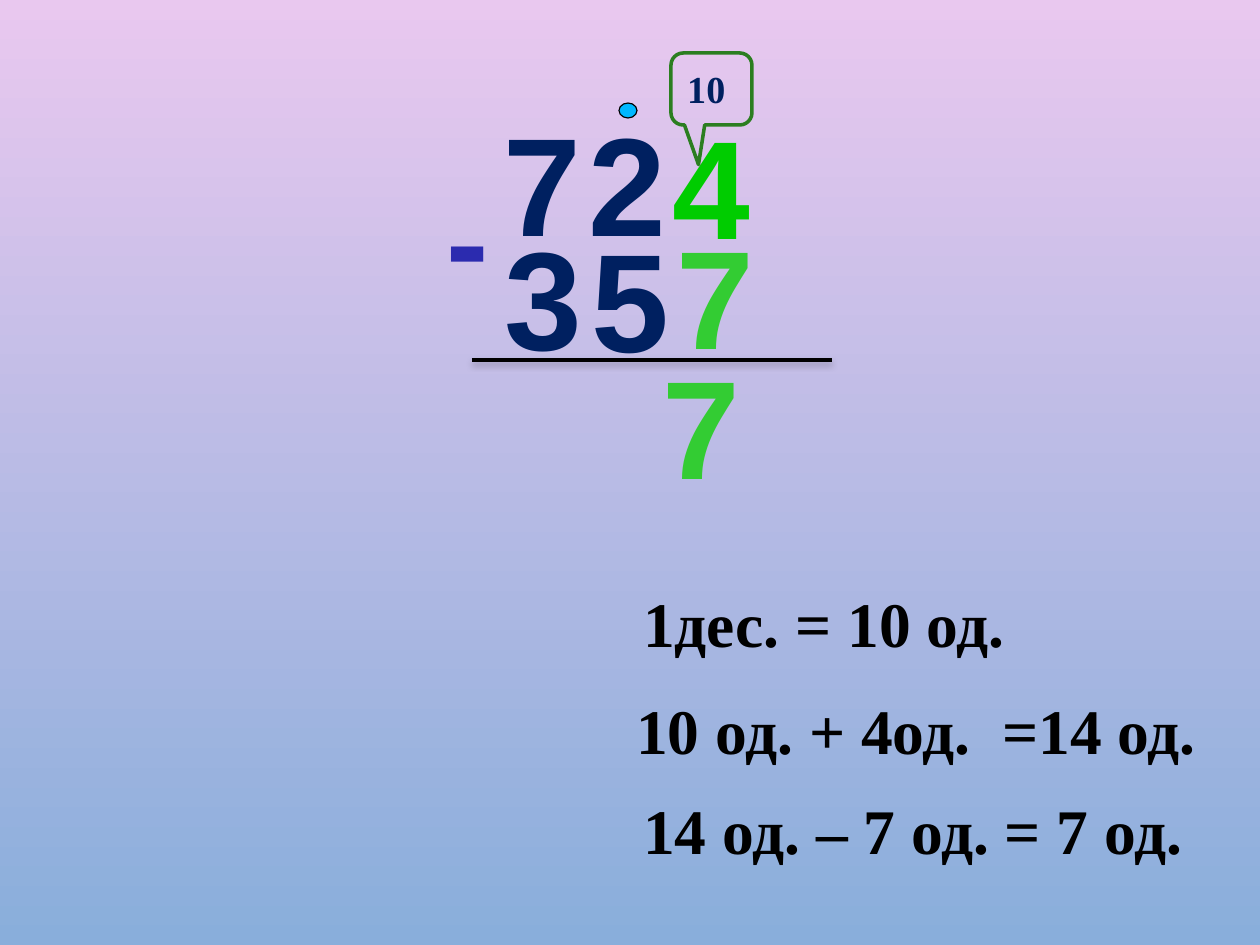
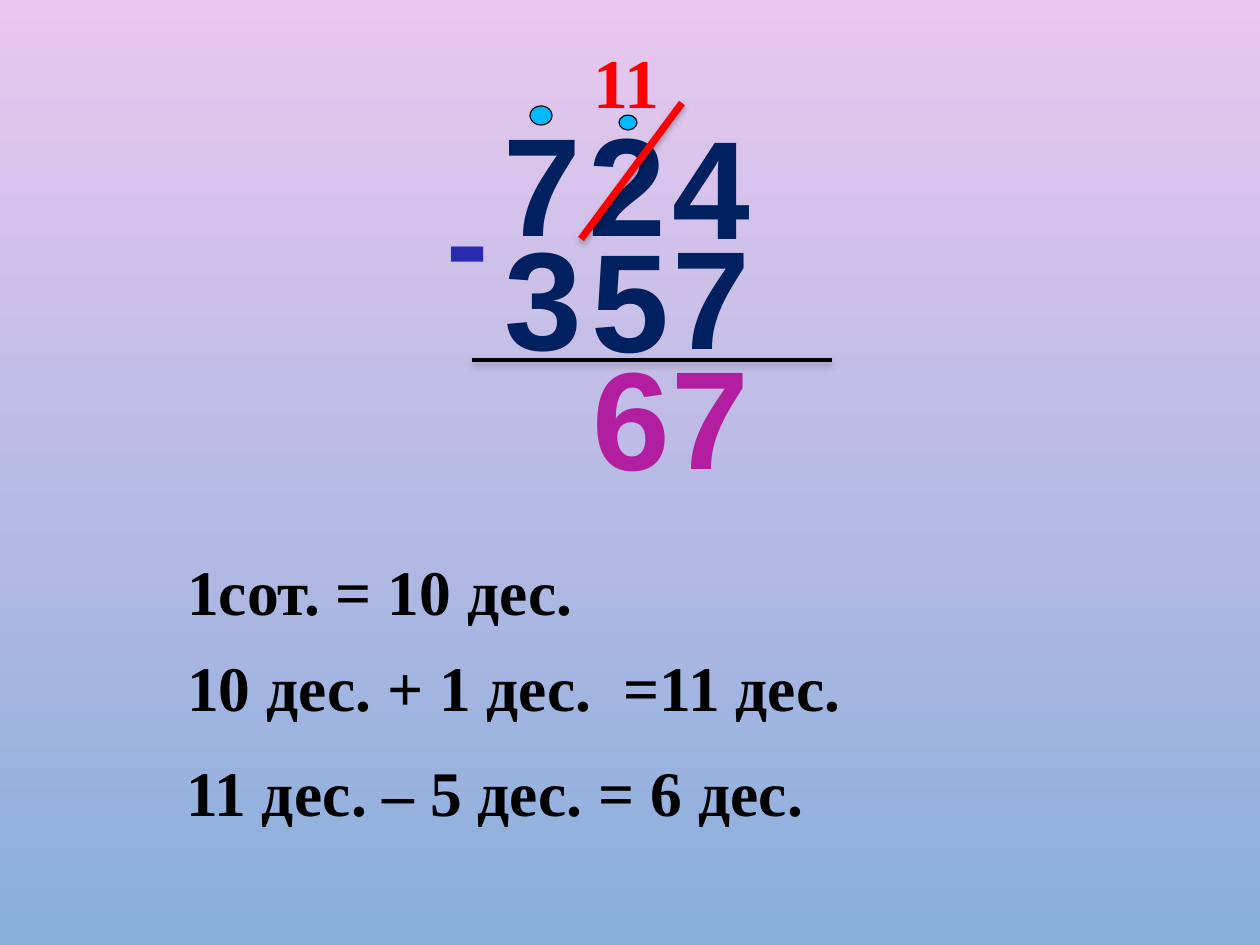
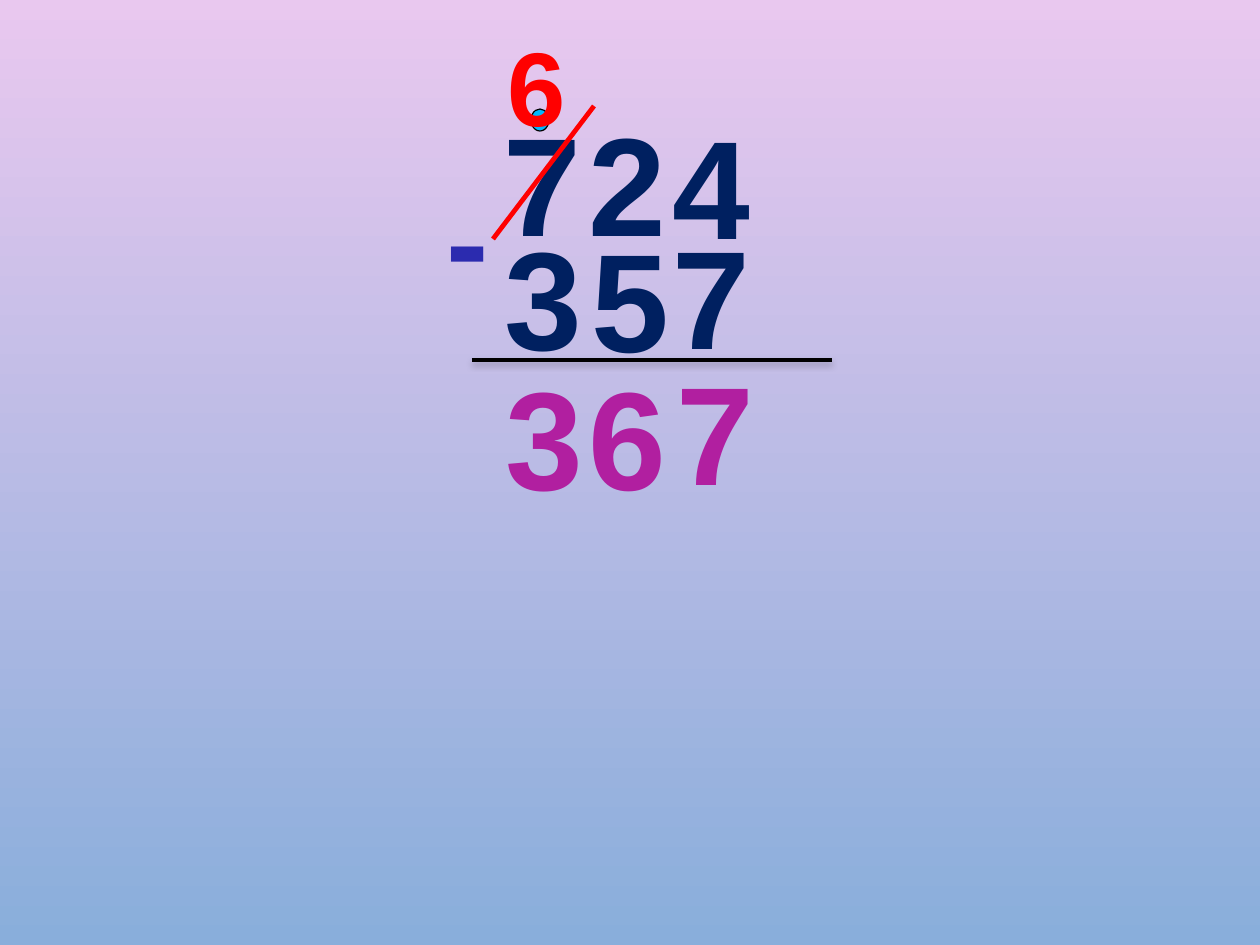
from dataclasses import dataclass

from lxml.etree import SubElement
from pptx import Presentation
from pptx.dml.color import RGBColor
from pptx.enum.shapes import MSO_CONNECTOR, MSO_SHAPE
from pptx.enum.text import MSO_AUTO_SIZE, PP_ALIGN
from pptx.oxml.ns import qn
from pptx.util import Pt

PX = 8000


@dataclass(frozen=True)
class Theme:
    sky: str = "E9C8EF"
    sea: str = "89AEDB"
    navy: str = "002060"
    lime: str = "00CC00"
    green: str = "33CC33"
    moss: str = "2B7E20"
    plum: str = "B11FA0"
    minus: str = "2B2BAF"
    red: str = "FF0000"
    cyan: str = "00B8FF"
    black: str = "000000"
    sans: str = "Arial"
    serif: str = "Times New Roman"
    digit: int = 88
    sign: int = 80
    carry: int = 66
    count: int = 44
    body: int = 40
    note: int = 24
    tight: float = 0.93


T = Theme()


def emu(*sizes):
    return [size * PX for size in sizes]


def rgb(code):
    return RGBColor.from_string(code)


def label(slide, box, text, size, color, face=T.sans, align=PP_ALIGN.CENTER,
          wrap=False, lead=T.tight):
    frame = slide.shapes.add_textbox(*emu(*box)).text_frame
    frame.word_wrap = wrap
    frame.auto_size = MSO_AUTO_SIZE.SHAPE_TO_FIT_TEXT
    line = frame.paragraphs[0]
    line.alignment = align
    line.line_spacing = lead
    font = line.font
    font.name, font.size, font.bold = face, Pt(size), True
    font.color.rgb = rgb(color)
    head, gap, tail = text.partition("|")
    line.add_run().text = head
    if gap:
        space = line.add_run()
        space.text = " "
        space._r.get_or_add_rPr().set("spc", "1000")
        line.add_run().text = tail


def stroke(slide, start, end, color, width, shade=True):
    line = slide.shapes.add_connector(MSO_CONNECTOR.STRAIGHT, *emu(*start, *end))
    line.line.color.rgb = rgb(color)
    line.line.width = Pt(width)
    effect = SubElement(line._element.spPr, qn("a:effectLst"))
    if shade:
        cast = SubElement(effect, qn("a:outerShdw"), blurRad=str(Pt(4)),
                          dist=str(Pt(2)), dir="5400000", rotWithShape="0")
        tint = SubElement(cast, qn("a:srgbClr"), val=T.black)
        SubElement(tint, qn("a:alpha"), val="28000")


def figure(slide, kind, box, edge, width, fill=None):
    shape = slide.shapes.add_shape(kind, *emu(*box))
    shape.shadow.inherit = False
    if fill:
        shape.fill.solid()
        shape.fill.fore_color.rgb = rgb(fill)
    else:
        shape.fill.background()
    shape.line.color.rgb = rgb(edge)
    shape.line.width = Pt(width)
    return shape


def dot(slide, box):
    figure(slide, MSO_SHAPE.FLOWCHART_CONNECTOR, box, T.black, 0.75, T.cyan)


def bubble(slide, box, text):
    left, top, width, height = box
    shape = figure(slide, MSO_SHAPE.ROUNDED_RECTANGULAR_CALLOUT, box, T.moss, 2.25)
    for at, value in enumerate((-0.16, 1.05, 0.17)):
        shape.adjustments[at] = value
    label(slide, (left + 5, top + 11, width - 19, height - 17), text,
          T.note, T.navy, T.serif, PP_ALIGN.LEFT)


def number(slide, left, top, digits):
    for text, x, y, color in digits:
        label(slide, (left + x, top + y, 102, 169), text, T.digit, color)


def column(slide, left, top, last=(238, 113), ones=(T.navy, T.navy)):
    number(slide, left, top, [("4", 238, 3, ones[0]), ("7", *last, ones[1])])
    label(slide, (left - 1, top + 63, 94, 154), "-", T.sign, T.minus)
    stroke(slide, (left + 50, top + 254), (left + 410, top + 254), T.black, 2)
    number(slide, left, top, [
        ("2", 154, 0, T.navy), ("5", 157, 116, T.navy),
        ("7", 69, 0, T.navy), ("3", 70, 114, T.navy),
    ])


def steps(slide, left, top, width, lines):
    for text, x, y in lines:
        label(slide, (left + x, top + y, width, 83), text, T.body, T.black,
              T.serif, PP_ALIGN.LEFT, wrap=True)


def units(slide, left, top):
    column(slide, left, top, (242, 113), (T.lime, T.green))
    dot(slide, (left + 197, top - 3, 18, 15))
    bubble(slide, (left + 249, top - 53, 81, 72), "10")
    steps(slide, left + 203, top + 479, 628, [
        ("10 од. + 4од.|=14 од.", 0, 107),
        ("14 од. – 7 од. = 7 од.", 7, 207),
    ])
    number(slide, left, top, [("7", 228, 243, T.green)])
    steps(slide, left + 203, top + 479, 628, [("1дес. = 10 од.", 7, 0)])


def tens(slide, left, top):
    column(slide, left, top)
    number(slide, left, top, [("7", 237, 233, T.plum)])
    dot(slide, (left + 197, top + 9, 18, 15))
    stroke(slide, (left + 260, top - 3), (left + 159, top + 133), T.red, 4.5)
    dot(slide, (left + 108, top, 22, 19))
    steps(slide, left - 246, top + 447, 754, [
        ("1сот. = 10 дес.", 0, 0),
        ("10 дес. + 1 дес.|=11 дес.", 0, 96),
    ])
    label(slide, (left + 160, top - 73, 91, 96), "11", T.count, T.red,
          T.serif, PP_ALIGN.LEFT, lead=1.0)
    steps(slide, left - 246, top + 447, 754,
          [("11 дес. – 5 дес. = 6 дес.", -1, 201)])
    number(slide, left, top, [("6", 158, 234, T.plum)])


def hundreds(slide, left, top):
    column(slide, left, top)
    number(slide, left, top, [("7", 242, 249, T.plum), ("6", 154, 254, T.plum)])
    dot(slide, (left + 109, top + 3, 18, 22))
    stroke(slide, (left + 172, top), (left + 71, top + 133), T.red, 3, False)
    label(slide, (left + 74, top - 79, 82, 129), "6", T.carry, T.red)
    number(slide, left, top, [("3", 71, 254, T.plum)])


def paint(master):
    fill = master.background.fill
    fill.gradient()
    fill.gradient_angle = 270
    for stop, color, place in zip(fill.gradient_stops, (T.sky, T.sea), (0, 1)):
        stop.color.rgb = rgb(color)
        stop.position = place


def main():
    deck = Presentation()
    deck.slide_width, deck.slide_height = emu(1260, 945)
    paint(deck.slide_master)
    for build in (units, tens, hundreds):
        build(deck.slides.add_slide(deck.slide_layouts[6]), 422, 106)
    deck.save("out.pptx")


if __name__ == "__main__":
    main()
